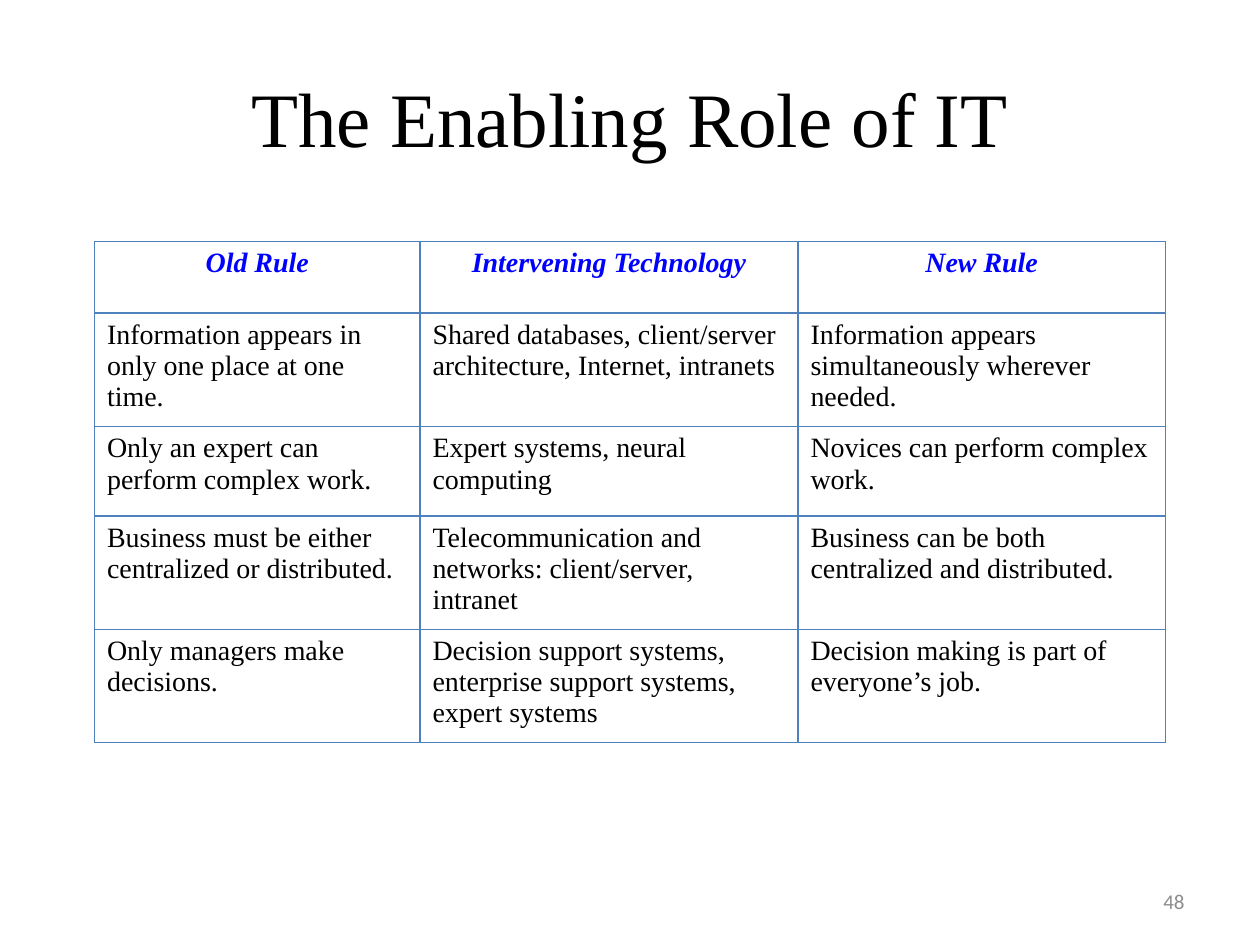
from lxml.etree import SubElement
from pptx import Presentation
from pptx.dml.color import RGBColor as RGB
from pptx.enum.text import MSO_ANCHOR as ANCHOR, PP_ALIGN as ALIGN
from pptx.oxml.ns import qn
from pptx.util import Pt

COLORS = {"text": "000000", "heading": "0000FF", "border": "4F81BD", "number": "8C8C8C"}
SERIF, SANS = "Times New Roman", "Calibri"

COLUMN_WIDTHS = [186, 216, 210]
ROW_HEIGHTS = [41, 57.6, 51, 57.6, 57.6]
RULES = [
    ("Old Rule", "Intervening Technology", "New Rule"),
    ("Information appears in only one place at one time.",
     "Shared databases, client/server architecture, Internet, intranets",
     "Information appears simultaneously wherever needed."),
    ("Only an expert can perform complex work.",
     "Expert systems, neural computing",
     "Novices can perform complex work."),
    ("Business must be either centralized or distributed.",
     "Telecommunication and networks: client/server, intranet",
     "Business can be both centralized and distributed."),
    ("Only managers make decisions.",
     "Decision support systems, enterprise support systems, expert systems",
     "Decision making is part of everyone’s job."),
]


def write(frame, words, size, font, color, align, emphasis=False):
    paragraph = frame.paragraphs[0]
    paragraph.alignment = align
    run = paragraph.add_run()
    run.text = words
    run.font.name = font
    run.font.size = Pt(size)
    run.font.bold = run.font.italic = emphasis
    run.font.color.rgb = RGB.from_string(COLORS[color])


def draw_borders(cell):
    cell.fill.background()
    properties = cell._tc.get_or_add_tcPr()
    for position, side in enumerate(("lnL", "lnR", "lnT", "lnB")):
        line = SubElement(properties, qn(f"a:{side}"), w=str(Pt(1)))
        solid = SubElement(line, qn("a:solidFill"))
        SubElement(solid, qn("a:srgbClr"), val=COLORS["border"])
        properties.insert(position, line)


def place_title(slide, left, top, width, height):
    title = slide.shapes.title
    title.left, title.top, title.width, title.height = map(Pt, (left, top, width, height))
    title.text_frame.vertical_anchor = ANCHOR.MIDDLE
    write(title.text_frame, "The Enabling Role of IT", 44, SERIF, "text", ALIGN.CENTER)


def place_rules(slide, left, top, width, height):
    frame = slide.shapes.add_table(len(RULES), len(COLUMN_WIDTHS),
                                   *map(Pt, (left, top, width, height)))
    table = frame.table
    table.first_row = table.horz_banding = False
    for column, column_width in zip(table.columns, COLUMN_WIDTHS):
        column.width = Pt(column_width)
    for index, (row, row_height, entries) in enumerate(zip(table.rows, ROW_HEIGHTS, RULES)):
        row.height = Pt(row_height)
        heading = index == 0
        for cell, entry in zip(row.cells, entries):
            write(cell.text_frame, entry, 16, SERIF, "heading" if heading else "text",
                  ALIGN.CENTER if heading else ALIGN.LEFT, heading)
            draw_borders(cell)


def place_number(slide, left, top, width, height):
    frame = slide.shapes.add_textbox(*map(Pt, (left, top, width, height))).text_frame
    frame.word_wrap = True
    frame.vertical_anchor = ANCHOR.MIDDLE
    write(frame, "48", 12, SANS, "number", ALIGN.RIGHT)


def main():
    deck = Presentation()
    deck.slide_width, deck.slide_height = Pt(720), Pt(540)
    slide = deck.slides.add_slide(deck.slide_layouts[5])
    place_number(slide, 516, 500.5, 168, 28.75)
    place_title(slide, 36, 21.6, 648, 90)
    place_rules(slide, 54, 138, sum(COLUMN_WIDTHS), sum(ROW_HEIGHTS))
    deck.save("out.pptx")


if __name__ == "__main__":
    main()
